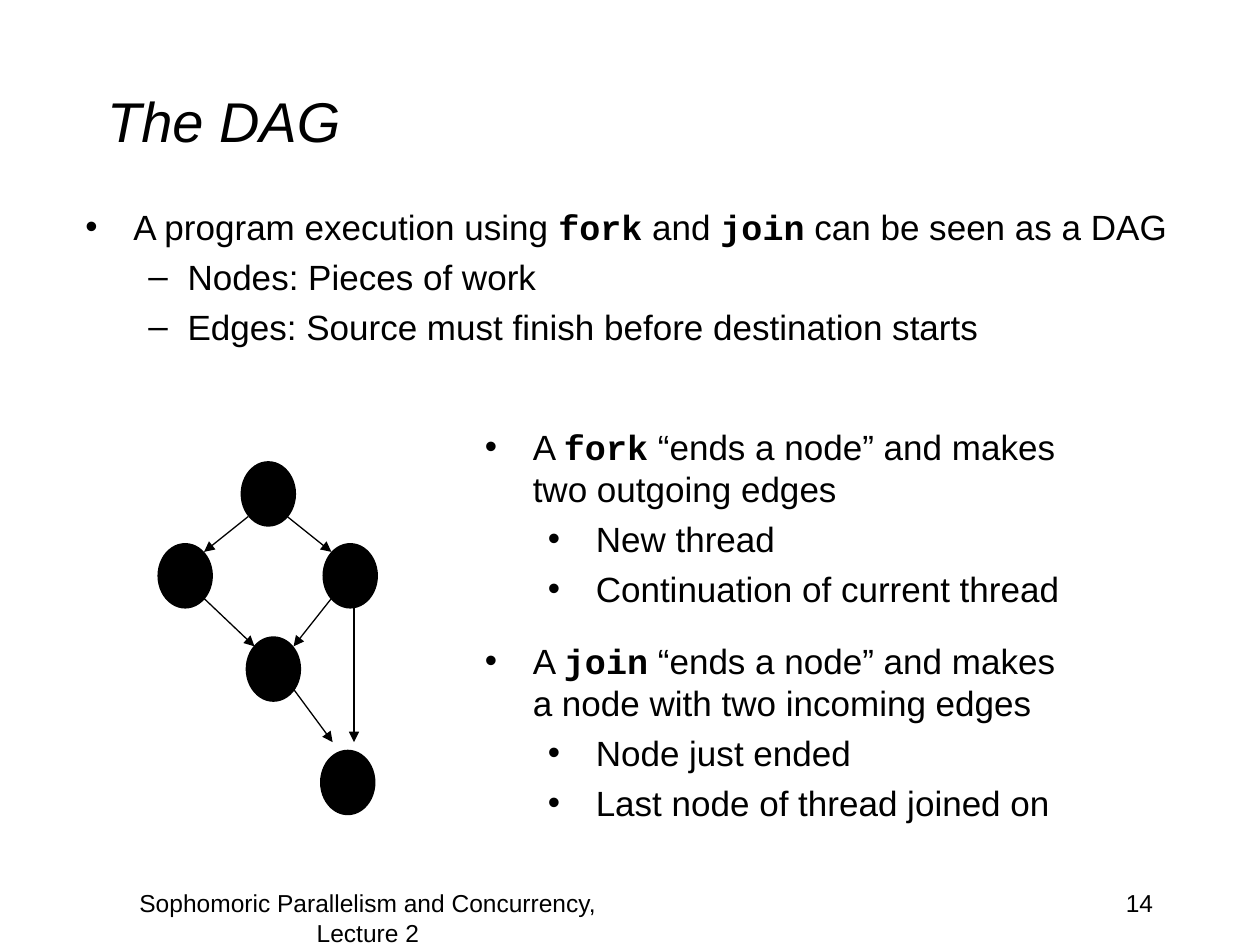
"""Build a slide on the DAG formed by fork and join."""
from lxml import etree
from pptx import Presentation
from pptx.dml.color import RGBColor
from pptx.enum import shapes, text
from pptx.oxml.ns import qn
from pptx.util import Inches, Pt

COLORS = {"ink": "000000", "paper": "FFFFFF"}
NODE_SIZE = (0.44, 0.52)
NODES = [(1.91, 3.66), (1.25, 4.31), (2.56, 4.31), (1.95, 5.05), (2.54, 5.95)]
EDGES = [
    ((1.97, 4.1), (1.62, 4.38)),
    ((2.28, 4.1), (2.63, 4.38)),
    ((1.62, 4.75), (2.02, 5.13)),
    ((2.63, 4.75), (2.33, 5.13)),
    ((2.81, 4.8), (2.81, 5.89)),
    ((2.33, 5.47), (2.64, 5.89)),
]
OVERVIEW = [
    (0, "A program execution using `fork` and `join` can be seen as a DAG"),
    (1, "Nodes: Pieces of work"),
    (1, "Edges: Source must finish before destination starts"),
]
FORK_AND_JOIN = [
    (0, "A `fork` “ends a node” and makes two outgoing edges"),
    (1, "New thread"),
    (1, "Continuation of current thread"),
    (0, "A `join` “ends a node” and makes a node with two incoming edges"),
    (1, "Node just ended"),
    (1, "Last node of thread joined on"),
]


class SlideBuilder:
    """Hold the style and the current slide."""

    body_font = "Arial"
    code_font = "Courier New"
    item_gap = 4.6
    group_gap = 17

    def __init__(self, slide):
        self.slide = slide
        slide.background.fill.solid()
        slide.background.fill.fore_color.rgb = self.color("paper")

    def color(self, name):
        return RGBColor.from_string(COLORS[name])

    def add_run(self, paragraph, content, size, code=False, italic=False):
        run = paragraph.add_run()
        run.text = content
        run.font.name = self.code_font if code else self.body_font
        run.font.size = Pt(size)
        run.font.bold = code
        run.font.italic = italic
        run.font.color.rgb = self.color("ink")

    def title(self, content, left, top, width, height):
        shape = self.slide.shapes.title
        shape.left, shape.top = Inches(left), Inches(top)
        shape.width, shape.height = Inches(width), Inches(height)
        shape.text_frame.vertical_anchor = text.MSO_ANCHOR.MIDDLE
        paragraph = shape.text_frame.paragraphs[0]
        paragraph.alignment = text.PP_ALIGN.LEFT
        self.add_run(paragraph, content, 32, italic=True)

    def text_frame(self, left, top, width, height):
        box = self.slide.shapes.add_textbox(
            Inches(left), Inches(top), Inches(width), Inches(height))
        box.text_frame.word_wrap = True
        return box.text_frame

    def label(self, content, alignment, *bounds):
        paragraph = self.text_frame(*bounds).paragraphs[0]
        paragraph.alignment = alignment
        self.add_run(paragraph, content, 14)

    def bullets(self, items, levels, *bounds):
        """Add a list; levels give mark, margin and hanging indent, backticks mark code."""
        frame = self.text_frame(*bounds)
        for index, (level, content) in enumerate(items):
            paragraph = frame.add_paragraph() if index else frame.paragraphs[0]
            new_group = index and level == 0
            paragraph.space_before = Pt(self.group_gap if new_group else self.item_gap)
            paragraph.level = level
            mark, margin, hanging = levels[level]
            properties = paragraph._p.get_or_add_pPr()
            properties.set("marL", str(Inches(margin)))
            properties.set("indent", str(-Inches(hanging)))
            etree.SubElement(properties, qn("a:buFont"), typeface=self.body_font)
            etree.SubElement(properties, qn("a:buChar"), char=mark)
            for part, words in enumerate(content.split("`")):
                self.add_run(paragraph, words, 20, code=part % 2 == 1)

    def node(self, left, top):
        width, height = NODE_SIZE
        shape = self.slide.shapes.add_shape(
            shapes.MSO_SHAPE.OVAL, Inches(left), Inches(top), Inches(width), Inches(height))
        shape.shadow.inherit = False
        shape.fill.solid()
        shape.fill.fore_color.rgb = self.color("ink")
        shape.line.fill.background()

    def edge(self, start, end):
        connector = self.slide.shapes.add_connector(
            shapes.MSO_CONNECTOR.STRAIGHT, *map(Inches, start + end))
        connector.line.color.rgb = self.color("ink")
        connector.line.width = Pt(0.75)
        etree.SubElement(connector.line._get_or_add_ln(), qn("a:tailEnd"), type="triangle")
        etree.SubElement(connector._element.spPr, qn("a:effectLst"))


def main():
    presentation = Presentation()
    presentation.slide_width, presentation.slide_height = Inches(10), Inches(7.5)
    builder = SlideBuilder(presentation.slides.add_slide(presentation.slide_layouts[5]))
    builder.title("The DAG", 0.75, 0.33, 8.5, 1.25)
    builder.bullets(OVERVIEW, [("•", 0.38, 0.38), ("–", 0.81, 0.31)], 0.58, 1.58, 8.92, 1.92)
    builder.label("14", text.PP_ALIGN.RIGHT, 7.17, 7, 2.08, 0.5)
    builder.label("Sophomoric Parallelism and Concurrency, Lecture 2",
                  text.PP_ALIGN.CENTER, 0.67, 7, 4.5, 0.5)
    for position in NODES:
        builder.node(*position)
    for start, end in EDGES:
        builder.edge(start, end)
    builder.bullets(FORK_AND_JOIN, [("•", 0.38, 0.38), ("•", 0.88, 0.38)], 3.75, 3.33, 4.92, 3.17)
    presentation.save("out.pptx")


if __name__ == "__main__":
    main()
